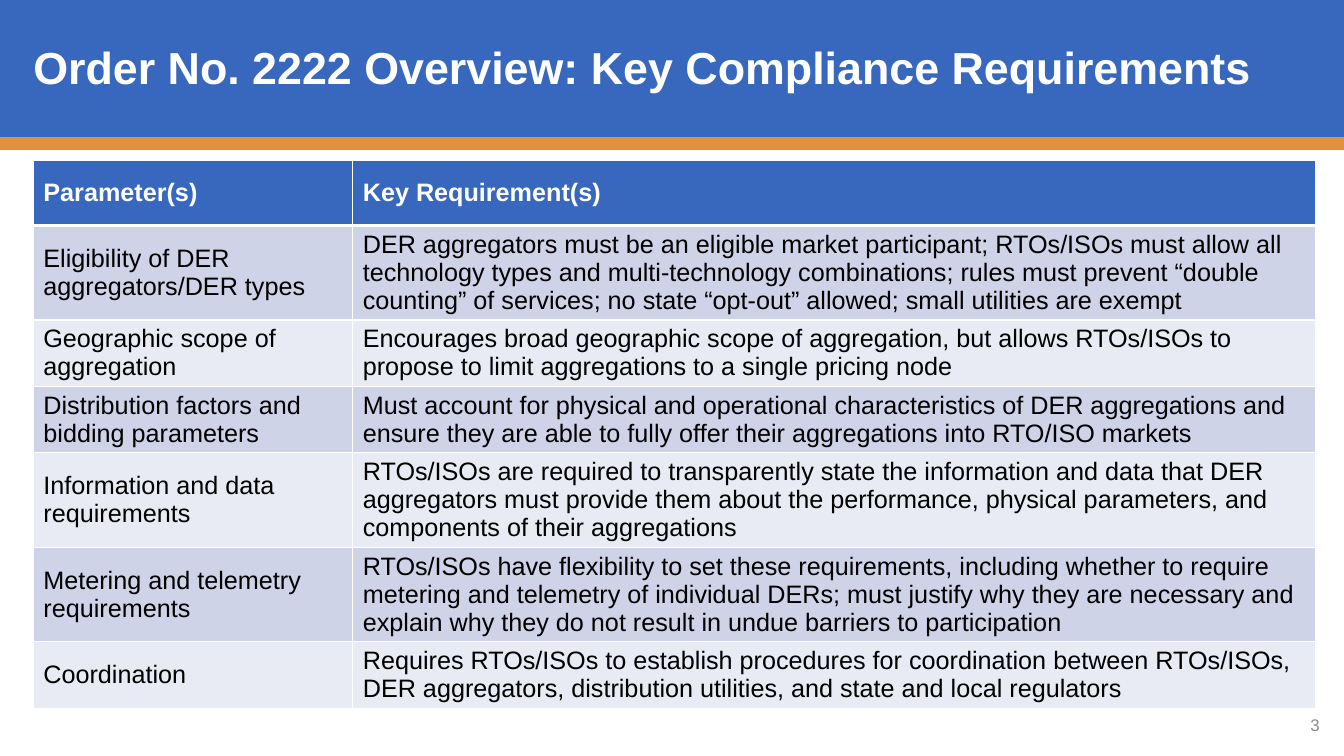
from lxml.etree import SubElement
from pptx import Presentation
from pptx.dml.color import RGBColor
from pptx.enum.shapes import MSO_SHAPE as Shape
from pptx.enum.text import MSO_ANCHOR as Anchor, PP_ALIGN as Align
from pptx.oxml.ns import qn
from pptx.util import Cm, Pt

BLUE = RGBColor(0x38, 0x67, 0xBE)
ORANGE = RGBColor(0xE2, 0x90, 0x40)
DARK_BAND = RGBColor(0xCE, 0xD3, 0xE8)
LIGHT_BAND = RGBColor(0xE8, 0xEB, 0xF4)
GREY = RGBColor(0x8C, 0x8C, 0x8C)
WHITE = RGBColor(0xFF, 0xFF, 0xFF)
BLACK = RGBColor(0x00, 0x00, 0x00)

PAGE_WIDTH, PAGE_HEIGHT = Cm(33.87), Cm(19.05)
MARGIN, CONTENT_WIDTH = Cm(0.84), Cm(32.31)
BANNER_HEIGHT = Cm(3.45)
COLUMN_WIDTHS = (Cm(8.05), Cm(24.26))
ROW_HEIGHT = Cm(1.65)
TABLE_LINE_SPACING = Pt(20.1)

REQUIREMENTS = [
    ("Parameter(s)", "Key Requirement(s)"),
    ("Eligibility of DER aggregators/DER types",
     "DER aggregators must be an eligible market participant; RTOs/ISOs must allow all "
     "technology types and multi-technology combinations; rules must prevent “double "
     "counting” of services; no state “opt-out” allowed; small utilities are exempt"),
    ("Geographic scope of aggregation",
     "Encourages broad geographic scope of aggregation, but allows RTOs/ISOs to "
     "propose to limit aggregations to a single pricing node"),
    ("Distribution factors and bidding parameters",
     "Must account for physical and operational characteristics of DER aggregations and "
     "ensure they are able to fully offer their aggregations into RTO/ISO markets"),
    ("Information and data requirements",
     "RTOs/ISOs are required to transparently state the information and data that DER "
     "aggregators must provide them about the performance, physical parameters, and "
     "components of their aggregations"),
    ("Metering and telemetry requirements",
     "RTOs/ISOs have flexibility to set these requirements, including whether to require "
     "metering and telemetry of individual DERs; must justify why they are necessary and "
     "explain why they do not result in undue barriers to participation"),
    ("Coordination",
     "Requires RTOs/ISOs to establish procedures for coordination between RTOs/ISOs, "
     "DER aggregators, distribution utilities, and state and local regulators"),
]


def add_text(frame, text, size, color, bold=False, align=Align.LEFT):
    para = frame.paragraphs[0]
    para.alignment = align
    span = para.add_run()
    span.text = text
    span.font.name = "Arial"
    span.font.size = Pt(size)
    span.font.bold = bold
    span.font.color.rgb = color
    return para


def add_bar(page, top, color):
    bar = page.shapes.add_shape(Shape.RECTANGLE, 0, top, PAGE_WIDTH, BANNER_HEIGHT)
    bar.shadow.inherit = False
    bar.fill.solid()
    bar.fill.fore_color.rgb = color
    bar.line.fill.background()
    return bar


def add_banner(page):
    bars = [add_bar(page, Cm(0.33), ORANGE), add_bar(page, 0, BLUE)]
    for bar in bars:
        page.shapes.title._element.addprevious(bar._element)


def set_title(page, text):
    title = page.shapes.title
    title.left, title.top = MARGIN, 0
    title.width, title.height = CONTENT_WIDTH, BANNER_HEIGHT
    frame = title.text_frame
    frame.word_wrap = True
    frame.vertical_anchor = Anchor.MIDDLE
    frame.margin_left = frame.margin_right = frame.margin_top = frame.margin_bottom = 0
    add_text(frame, text, 32, WHITE, bold=True).line_spacing = Pt(36)


def add_page_number(page, number):
    box = page.shapes.add_textbox(Cm(32.39), Cm(17.83), Cm(1.12), Cm(0.89))
    frame = box.text_frame
    frame.word_wrap = True
    frame.vertical_anchor = Anchor.MIDDLE
    add_text(frame, number, 12, GREY, align=Align.RIGHT)


def set_borders(cell, bottom, top):
    properties = cell._tc.get_or_add_tcPr()
    for side, points in (("L", 1), ("R", 1), ("T", top), ("B", bottom)):
        line = SubElement(properties, qn(f"a:ln{side}"), w=str(Pt(points)))
        fill = SubElement(line, qn("a:solidFill"))
        SubElement(fill, qn("a:srgbClr"), val=str(WHITE))


def format_cell(cell, text, row):
    header = row == 0
    set_borders(cell, bottom=3 if header else 1, top=3 if row == 1 else 1)
    cell.fill.solid()
    cell.fill.fore_color.rgb = BLUE if header else DARK_BAND if row % 2 else LIGHT_BAND
    cell.vertical_anchor = Anchor.MIDDLE
    para = add_text(cell.text_frame, text, 18, WHITE if header else BLACK, bold=header)
    para.line_spacing = TABLE_LINE_SPACING


def add_requirements_table(page):
    count = len(REQUIREMENTS)
    table = page.shapes.add_table(
        count, len(COLUMN_WIDTHS), MARGIN, Cm(4.03), CONTENT_WIDTH, ROW_HEIGHT * count).table
    for column, width in zip(table.columns, COLUMN_WIDTHS):
        column.width = width
    for row, texts in enumerate(REQUIREMENTS):
        table.rows[row].height = ROW_HEIGHT
        for column, text in enumerate(texts):
            format_cell(table.cell(row, column), text, row)


def main():
    deck = Presentation()
    deck.slide_width, deck.slide_height = PAGE_WIDTH, PAGE_HEIGHT
    page = deck.slides.add_slide(deck.slide_layouts.get_by_name("Title Only"))
    add_banner(page)
    set_title(page, "Order No. 2222 Overview: Key Compliance Requirements")
    add_page_number(page, "3")
    add_requirements_table(page)
    deck.save("out.pptx")


if __name__ == "__main__":
    main()
